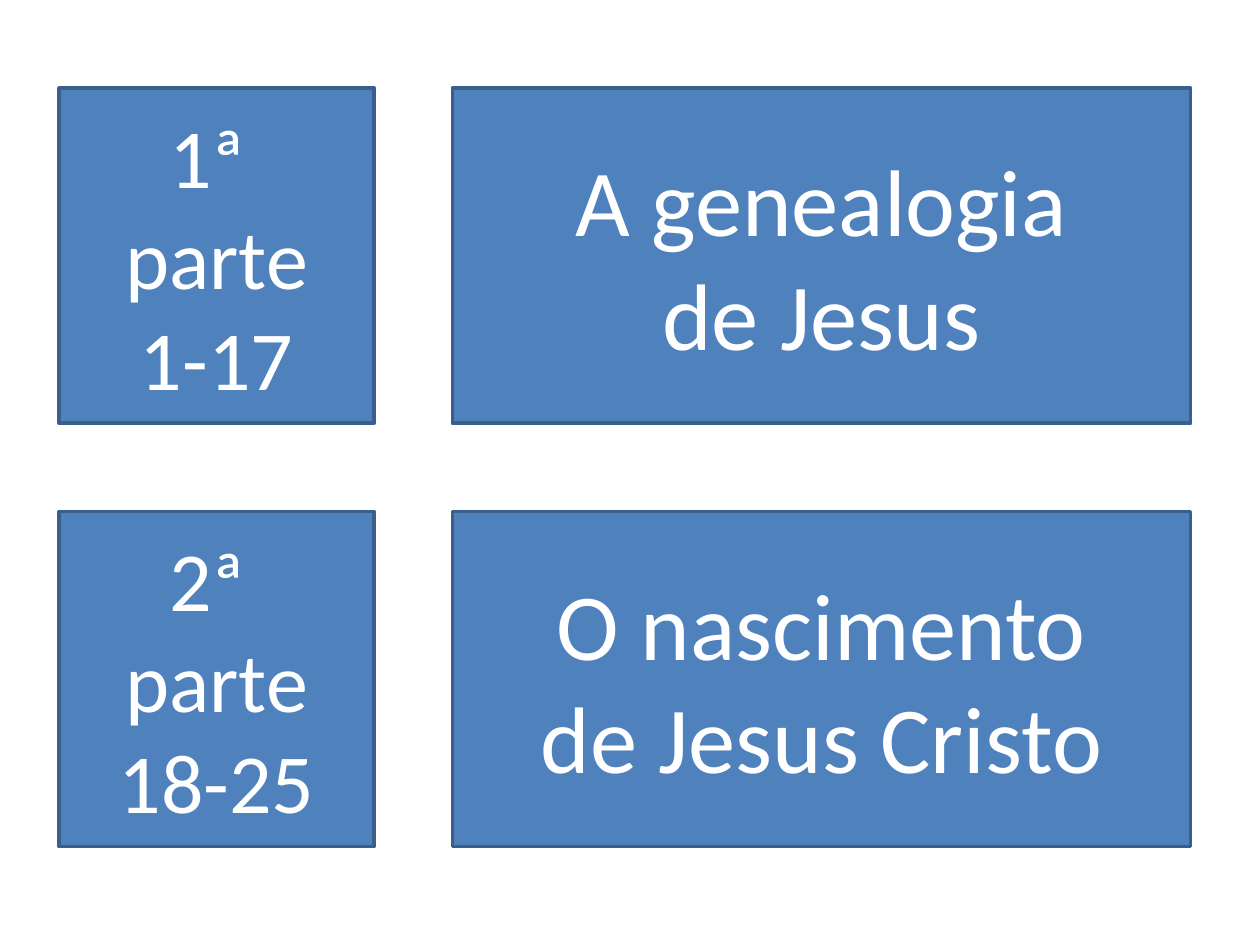
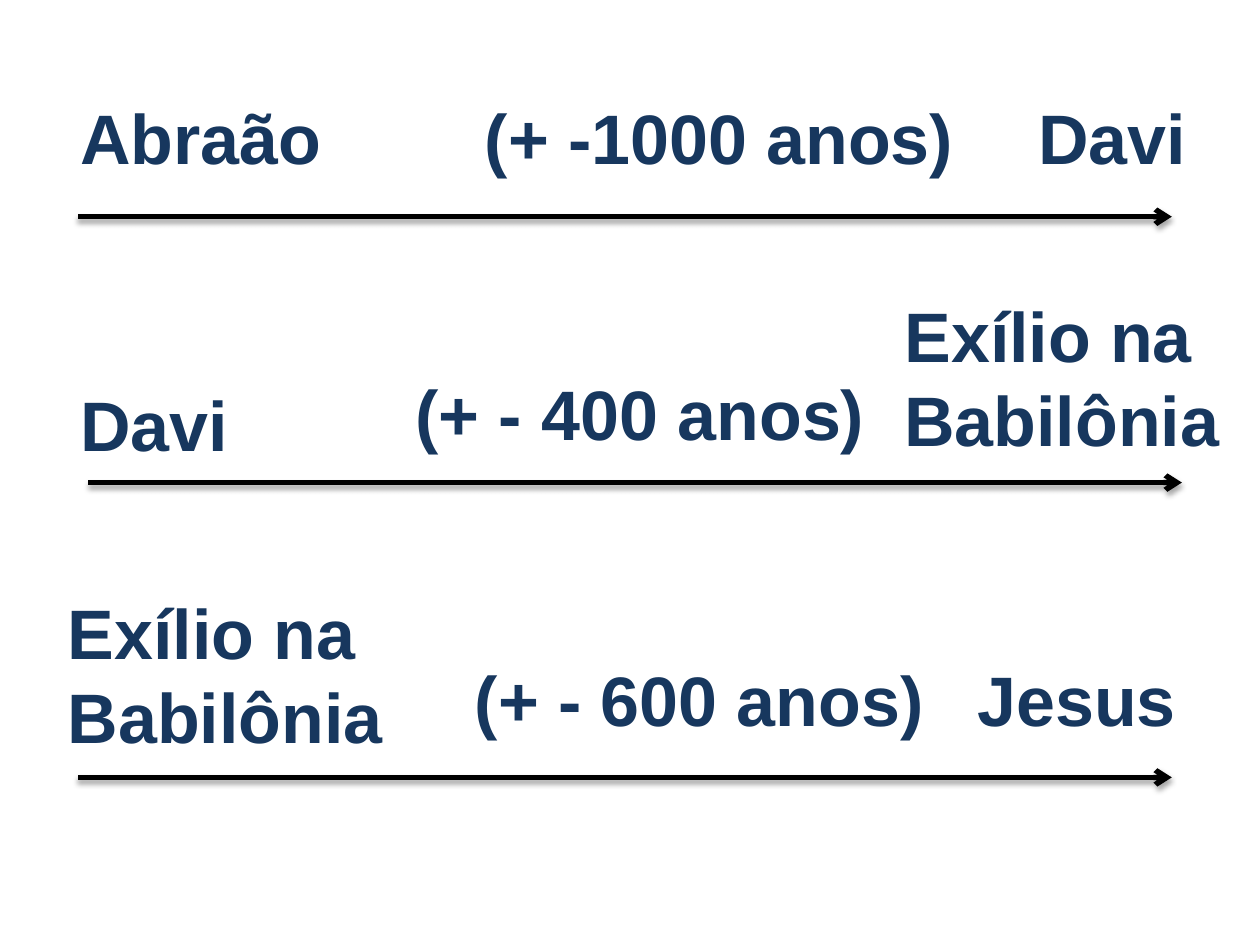
from lxml.etree import SubElement
from pptx import Presentation
from pptx.dml.color import RGBColor
from pptx.enum.shapes import MSO_CONNECTOR, MSO_SHAPE
from pptx.enum.text import MSO_ANCHOR, PP_ALIGN
from pptx.oxml.ns import qn
from pptx.util import Emu, Pt

EMU_PER_PX = 9144
COLORS = {name: RGBColor.from_string(value) for name, value in {
    "box": "4F81BD",
    "border": "3A5F8C",
    "box_text": "FFFFFF",
    "label": "17375E",
    "arrow": "000000",
}.items()}


def px(*lengths):
    return [Emu(length * EMU_PER_PX) for length in lengths]


def write(shape, text, size, font, color, bold=False, align=PP_ALIGN.LEFT):
    frame = shape.text_frame
    frame.word_wrap = True
    frame.text = text
    for para in frame.paragraphs:
        para.alignment = align
        for span in para.runs:
            span.font.size = Pt(size)
            span.font.name = font
            span.font.bold = bold
            span.font.color.rgb = COLORS[color]


deck = Presentation()
deck.slide_width, deck.slide_height = px(1000, 750)
blank = deck.slide_layouts[6]

parts_page = deck.slides.add_slide(blank)
parts = [
    ("1ª \nparte\n1-17", "A genealogia\nde Jesus"),
    ("2ª \nparte\n18-25", "O nascimento\nde Jesus Cristo"),
]
columns = [(47, 250, 48), (359, 586, 54)]
for row, texts in enumerate(parts):
    for text, (left, width, size) in zip(texts, columns):
        box = parts_page.shapes.add_shape(
            MSO_SHAPE.RECTANGLE, *px(left, 70 + row * 336, width, 266))
        box.shadow.inherit = False
        box.fill.solid()
        box.fill.fore_color.rgb = COLORS["box"]
        box.line.color.rgb = COLORS["border"]
        box.line.width = Pt(2)
        box.text_frame.vertical_anchor = MSO_ANCHOR.MIDDLE
        write(box, text, size, "Calibri", "box_text", align=PP_ALIGN.CENTER)

timeline_page = deck.slides.add_slide(blank)
for left, top in [(62, 172), (70, 383), (62, 617)]:
    arrow = timeline_page.shapes.add_connector(
        MSO_CONNECTOR.STRAIGHT, *px(left, top, left + 868, top))
    arrow.line.color.rgb = COLORS["arrow"]
    arrow.line.width = Pt(3)
    SubElement(arrow.line._get_or_add_ln(), qn("a:tailEnd"), type="arrow")
    effects = SubElement(arrow._element.spPr, qn("a:effectLst"))
    shadow = SubElement(effects, qn("a:outerShdw"), blurRad="40000",
                        dist="23000", dir="5400000", rotWithShape="0")
    shade = SubElement(shadow, qn("a:srgbClr"), val=str(COLORS["arrow"]))
    SubElement(shade, qn("a:alpha"), val="35000")

labels = [
    ("Abraão", 54, 70, 220, 77),
    ("(+ -1000 anos)", 375, 70, 410, 77),
    ("Davi", 814, 70, 150, 77),
    ("Davi", 54, 298, 150, 77),
    ("(+ - 400 anos)", 320, 289, 390, 77),
    ("Exílio na Babilônia", 708, 227, 285, 144),
    ("Exílio na Babilônia", 44, 463, 285, 144),
    ("(+ - 600 anos)", 367, 516, 390, 77),
    ("Jesus", 766, 516, 178, 77),
]
for text, *place in labels:
    label = timeline_page.shapes.add_textbox(*px(*place))
    write(label, text, 40, "Arial", "label", bold=True)

deck.save("out.pptx")
